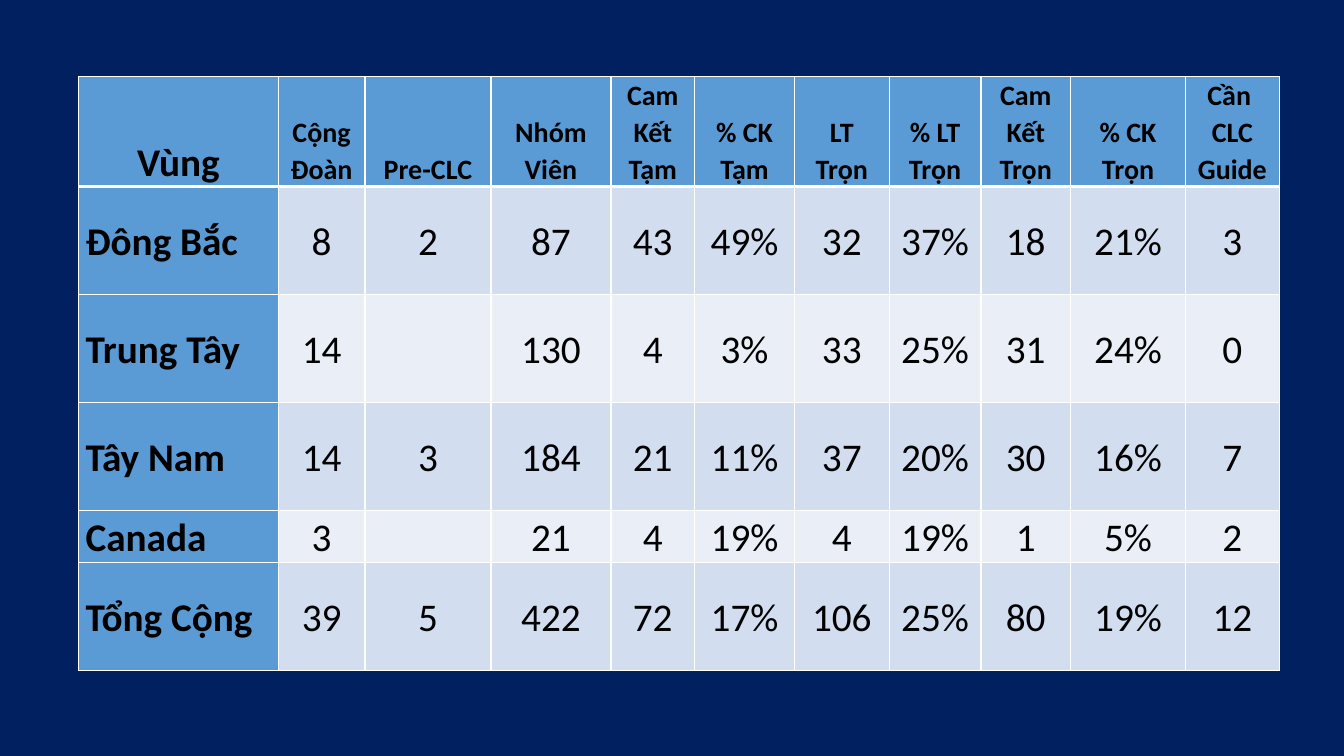
from dataclasses import dataclass

from lxml import etree
from pptx import Presentation
from pptx import util as u
from pptx.dml.color import RGBColor
from pptx.enum import text
from pptx.oxml import ns

NAVY = RGBColor(0x00, 0x20, 0x60)
BLUE = RGBColor(0x5B, 0x9B, 0xD5)
BAND_DARK = RGBColor(0xD2, 0xDE, 0xEF)
BAND_LIGHT = RGBColor(0xEA, 0xEF, 0xF7)
WHITE = RGBColor(0xFF, 0xFF, 0xFF)
BLACK = RGBColor(0x00, 0x00, 0x00)

COLUMN_WIDTHS = (1.98, 0.86, 1.25, 1.19, 0.83, 0.99, 0.94, 0.91, 0.89, 1.14, 0.93)
ROW_HEIGHTS = (1.03, 1.07, 1.07, 1.07, 0.52, 1.07)
ROWS = (
    ("Vùng", "Cộng Đoàn", "Pre-CLC", "Nhóm Viên", "Cam Kết Tạm", "% CK Tạm",
     "LT Trọn", "% LT Trọn", "Cam Kết Trọn", "% CK Trọn", "Cần \nCLC Guide"),
    ("Đông Bắc", "8", "2", "87", "43", "49%", "32", "37%", "18", "21%", "3"),
    ("Trung Tây", "14", "", "130", "4", "3%", "33", "25%", "31", "24%", "0"),
    ("Tây Nam", "14", "3", "184", "21", "11%", "37", "20%", "30", "16%", "7"),
    ("Canada", "3", "", "21", "4", "19%", "4", "19%", "1", "5%", "2"),
    ("Tổng Cộng", "39", "5", "422", "72", "17%", "106", "25%", "80", "19%", "12"),
)
CELL_FORMAT = {
    "margin_left": u.Inches(0.07),
    "margin_right": u.Inches(0.07),
    "margin_top": 0,
    "margin_bottom": 0,
}


@dataclass(frozen=True)
class CellStyle:
    fill: RGBColor
    size: int = 28
    bold: bool = False
    align: text.PP_ALIGN = text.PP_ALIGN.CENTER
    anchor: text.MSO_ANCHOR = text.MSO_ANCHOR.MIDDLE


def style_for(row: int, column: int) -> CellStyle:
    if row == 0:
        return CellStyle(BLUE, 20 if column else 28, True, anchor=text.MSO_ANCHOR.BOTTOM)
    if column == 0:
        return CellStyle(BLUE, bold=True, align=text.PP_ALIGN.LEFT)
    return CellStyle(BAND_DARK if row % 2 else BAND_LIGHT)


def add_borders(cell, row: int) -> None:
    """Draw white cell borders, heavier on the line below the header."""
    widths = {"L": 1, "R": 1, "T": 3 if row == 1 else 1, "B": 3 if row == 0 else 1}
    properties = cell._tc.get_or_add_tcPr()
    for position, (side, width) in enumerate(widths.items()):
        line = etree.Element(ns.qn(f"a:ln{side}"), w=str(u.Pt(width)))
        fill = etree.SubElement(line, ns.qn("a:solidFill"))
        etree.SubElement(fill, ns.qn("a:srgbClr"), val=str(WHITE))
        properties.insert(position, line)


def fill_cell(cell, words: str, style: CellStyle) -> None:
    for name, value in {**CELL_FORMAT, "vertical_anchor": style.anchor}.items():
        setattr(cell, name, value)
    cell.fill.solid()
    cell.fill.fore_color.rgb = style.fill
    cell.text = words
    font_format = {"name": "Calibri", "size": u.Pt(style.size), "bold": style.bold}
    for para in cell.text_frame.paragraphs:
        para.alignment = style.align
        para.line_spacing = 1.07
        for span in para.runs:
            for name, value in font_format.items():
                setattr(span.font, name, value)
            span.font.color.rgb = BLACK


def add_region_table(page) -> None:
    frame = page.shapes.add_table(
        len(ROWS), len(COLUMN_WIDTHS), u.Inches(0.78), u.Inches(0.76),
        u.Inches(sum(COLUMN_WIDTHS)), u.Inches(sum(ROW_HEIGHTS)))
    table = frame.table
    for column, width in zip(table.columns, COLUMN_WIDTHS):
        column.width = u.Inches(width)
    for row, height in zip(table.rows, ROW_HEIGHTS):
        row.height = u.Inches(height)
    for row, entries in enumerate(ROWS):
        for column, words in enumerate(entries):
            cell = table.cell(row, column)
            fill_cell(cell, words, style_for(row, column))
            add_borders(cell, row)


def main() -> None:
    deck = Presentation()
    deck.slide_width = u.Inches(13.33)
    deck.slide_height = u.Inches(7.5)
    page = deck.slides.add_slide(deck.slide_layouts[6])
    page.background.fill.solid()
    page.background.fill.fore_color.rgb = NAVY
    add_region_table(page)
    deck.save("out.pptx")


if __name__ == "__main__":
    main()
